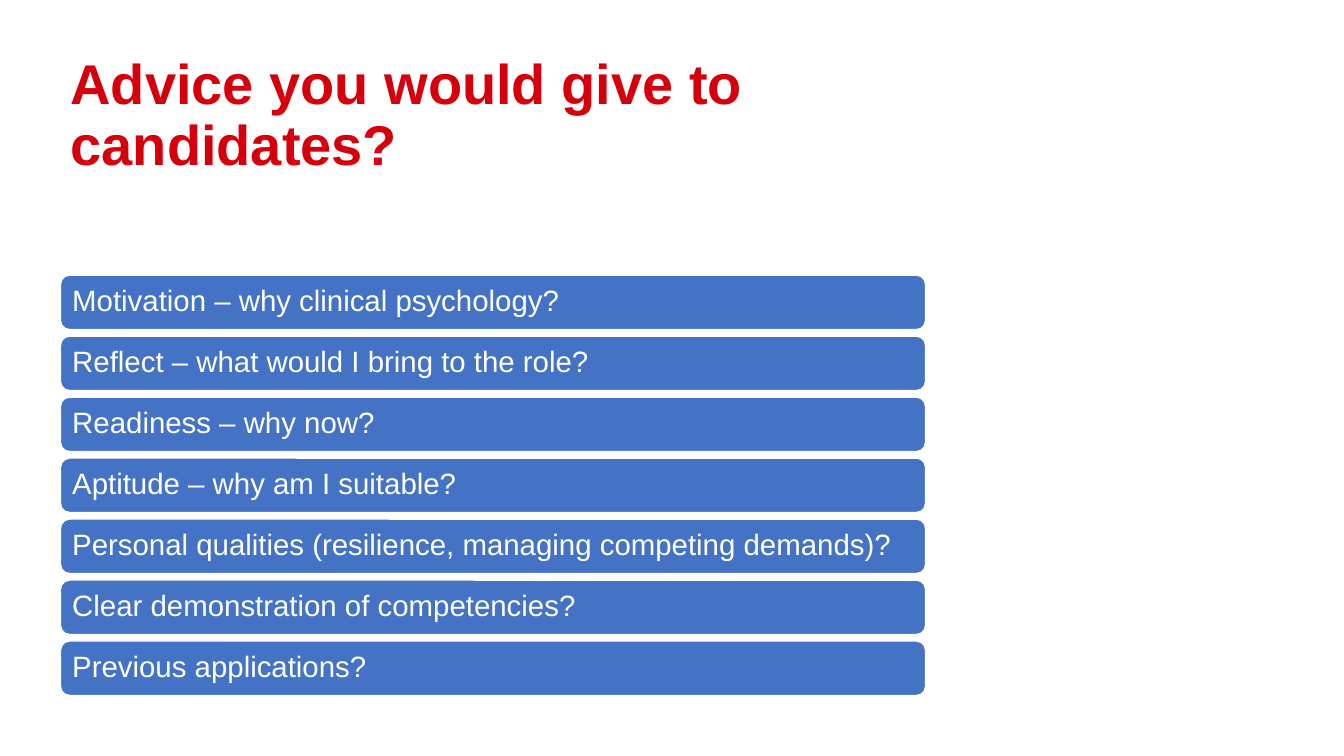
from dataclasses import dataclass

from pptx import Presentation
from pptx.dml.color import RGBColor
from pptx.enum.shapes import MSO_SHAPE as Shape
from pptx.enum.text import MSO_ANCHOR as Anchor, MSO_AUTO_SIZE as AutoSize, PP_ALIGN as Align
from pptx.util import Inches, Pt


@dataclass(frozen=True)
class Theme:
    """Colours, font and type sizes of the slide."""
    font: str = "Arial"
    red: RGBColor = RGBColor(0xD6, 0x00, 0x0D)
    blue: RGBColor = RGBColor(0x44, 0x72, 0xC4)
    white: RGBColor = RGBColor(0xFF, 0xFF, 0xFF)
    title_size: int = 40
    bar_size: int = 21


THEME = Theme()
LEFT = 0.6
BAR_TOP, BAR_PITCH, BAR_WIDTH, BAR_HEIGHT = 2.73, 0.605, 8.58, 0.54
ADVICE = [
    "Motivation – why clinical psychology?",
    "Reflect – what would I bring to the role?",
    "Readiness – why now?",
    "Aptitude – why am I suitable?",
    "Personal qualities (resilience, managing competing demands)?",
    "Clear demonstration of competencies?",
    "Previous applications?",
]


def write(tf, text, size, color, bold=False):
    """Write one left-aligned line of text into a frame."""
    tf.word_wrap = True
    tf.auto_size = AutoSize.NONE
    p = tf.paragraphs[0]
    p.alignment = Align.LEFT
    p.line_spacing = 0.9
    p.space_before = Pt(0)
    r = p.add_run()
    r.text = text
    r.font.name = THEME.font
    r.font.size = Pt(size)
    r.font.bold = bold
    r.font.color.rgb = color


def add_title(s, text):
    """Place and fill the title placeholder."""
    sp = s.shapes.title
    sp.left, sp.top = Inches(LEFT), Inches(0.51)
    sp.width, sp.height = Inches(7.49), Inches(1.53)
    sp.text_frame.vertical_anchor = Anchor.TOP
    write(sp.text_frame, text, THEME.title_size, THEME.red, bold=True)


def add_bar(s, top, text):
    """Add a rounded bar with its advice."""
    sp = s.shapes.add_shape(Shape.ROUNDED_RECTANGLE, Inches(LEFT), Inches(top),
                            Inches(BAR_WIDTH), Inches(BAR_HEIGHT))
    sp.shadow.inherit = False
    sp.fill.solid()
    sp.fill.fore_color.rgb = THEME.blue
    sp.line.color.rgb = THEME.white
    sp.line.width = Pt(1)
    tf = sp.text_frame
    tf.margin_left = tf.margin_right = Inches(0.09)
    tf.vertical_anchor = Anchor.MIDDLE
    write(tf, text, THEME.bar_size, THEME.white)


def main():
    """Build and save the slide."""
    prs = Presentation()
    prs.slide_width, prs.slide_height = Inches(13.33), Inches(7.5)
    s = prs.slides.add_slide(prs.slide_layouts[5])
    add_title(s, "Advice you would give to candidates?")
    for i, text in enumerate(ADVICE):
        add_bar(s, BAR_TOP + i * BAR_PITCH, text)
    prs.save("out.pptx")


if __name__ == "__main__":
    main()
